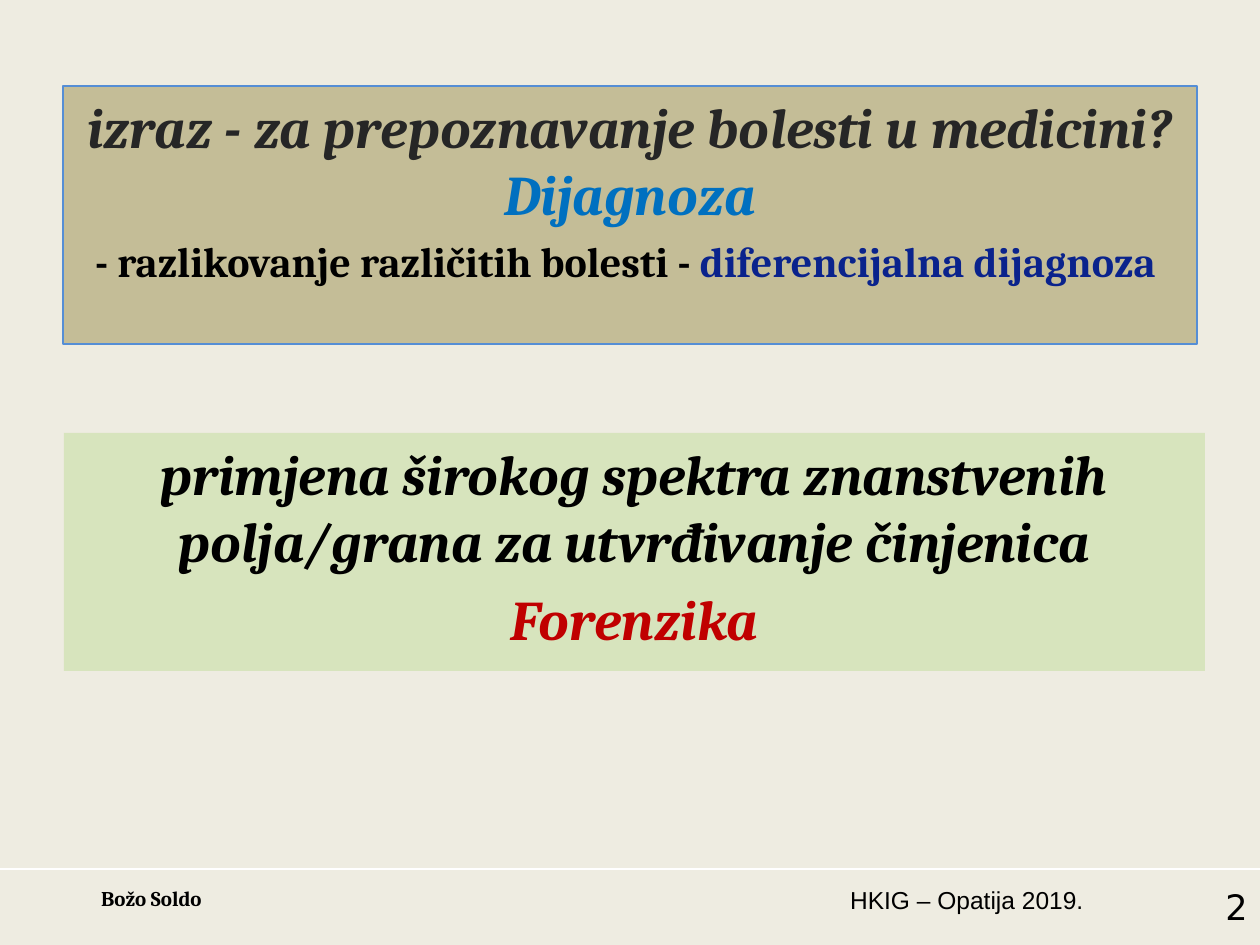
import pptx
import pptx.util
import pptx.dml.color
import pptx.enum.shapes
import pptx.enum.text
import lxml.etree

THEME = {
    "back": "EEECE1", "rule": "FFFFFF", "text": "000000",
    "tan": "C4BD97", "edge": "558ED5", "green": "D7E4BD",
    "dark": "262626", "blue": "0070C0", "navy": "0A238C", "red": "C00000",
    "large": 32, "mid": 24, "page": 20, "foot": 14, "name": 12,
    "serif": "Cambria", "sans": "Arial", "digit": "DejaVu Sans",
}
SCALE = 914400 / 126
ALIGN = pptx.enum.text.PP_ALIGN


def px(*sizes):
    return [pptx.util.Emu(round(size * SCALE)) for size in sizes]


def rgb(name):
    return pptx.dml.color.RGBColor.from_string(THEME[name])


deck = pptx.Presentation()
deck.slide_width, deck.slide_height = px(1260, 945)
slide = deck.slides.add_slide(deck.slide_layouts[6])
slide.background.fill.solid()
slide.background.fill.fore_color.rgb = rgb("back")

# Footer rule
rule = slide.shapes.add_connector(
    pptx.enum.shapes.MSO_CONNECTOR.STRAIGHT, *px(0, 869, 1260, 869))
rule.line.color.rgb = rgb("rule")
rule.line.width = pptx.util.Pt(1.5)
lxml.etree.SubElement(rule._element.spPr, pptx.oxml.ns.qn("a:effectLst"))

# Footer texts: left, width, text, size, font, bold, alignment
footer = [
    (828, 268, "HKIG – Opatija 2019.", "foot", "sans", False, ALIGN.RIGHT),
    (15, 273, "Božo Soldo", "name", "serif", True, ALIGN.CENTER),
    (1106, 154, "2", "page", "digit", False, ALIGN.RIGHT),
]
for left, width, words, size, face, bold, align in footer:
    box = slide.shapes.add_textbox(*px(left, 879, width, 66))
    box.text_frame.word_wrap = True
    box.text_frame.text = words
    para = box.text_frame.paragraphs[0]
    para.alignment = align
    font = para.runs[0].font
    font.size = pptx.util.Pt(THEME[size])
    font.name = THEME[face]
    font.bold = bold
    font.color.rgb = rgb("text")

# Panels: bounds, fill, edge, paragraphs of (size, italic, coloured runs)
panels = [
    ((63, 86, 1134, 258), "tan", "edge", [
        ("large", True, [("izraz - za prepoznavanje bolesti u medicini? ", "dark"),
                         ("Dijagnoza", "blue")]),
        ("mid", False, [("- razlikovanje različitih bolesti - ", "text"),
                        ("diferencijalna dijagnoza ", "navy")]),
    ]),
    ((64, 433, 1141, 238), "green", None, [
        ("large", True, [("primjena širokog spektra znanstvenih polja/grana "
                          "za utvrđivanje činjenica", "text")]),
        ("large", True, [("Forenzika", "red")]),
    ]),
]
for bounds, fill, edge, paras in panels:
    panel = slide.shapes.add_shape(
        pptx.enum.shapes.MSO_SHAPE.RECTANGLE, *px(*bounds))
    panel.shadow.inherit = False
    panel.fill.solid()
    panel.fill.fore_color.rgb = rgb(fill)
    if edge:
        panel.line.color.rgb = rgb(edge)
        panel.line.width = pptx.util.Pt(0.75)
    else:
        panel.line.fill.background()
    frame = panel.text_frame
    frame.word_wrap = True
    frame.vertical_anchor = pptx.enum.text.MSO_ANCHOR.TOP
    for row, (size, italic, runs) in enumerate(paras):
        para = frame.add_paragraph() if row else frame.paragraphs[0]
        para.alignment = ALIGN.CENTER
        if row:
            para.space_before = pptx.util.Pt(THEME[size] * 0.2)
        for words, color in runs:
            run = para.add_run()
            run.text = words
            run.font.size = pptx.util.Pt(THEME[size])
            run.font.name = THEME["serif"]
            run.font.bold = True
            run.font.italic = italic
            run.font.color.rgb = rgb(color)

deck.save("out.pptx")
